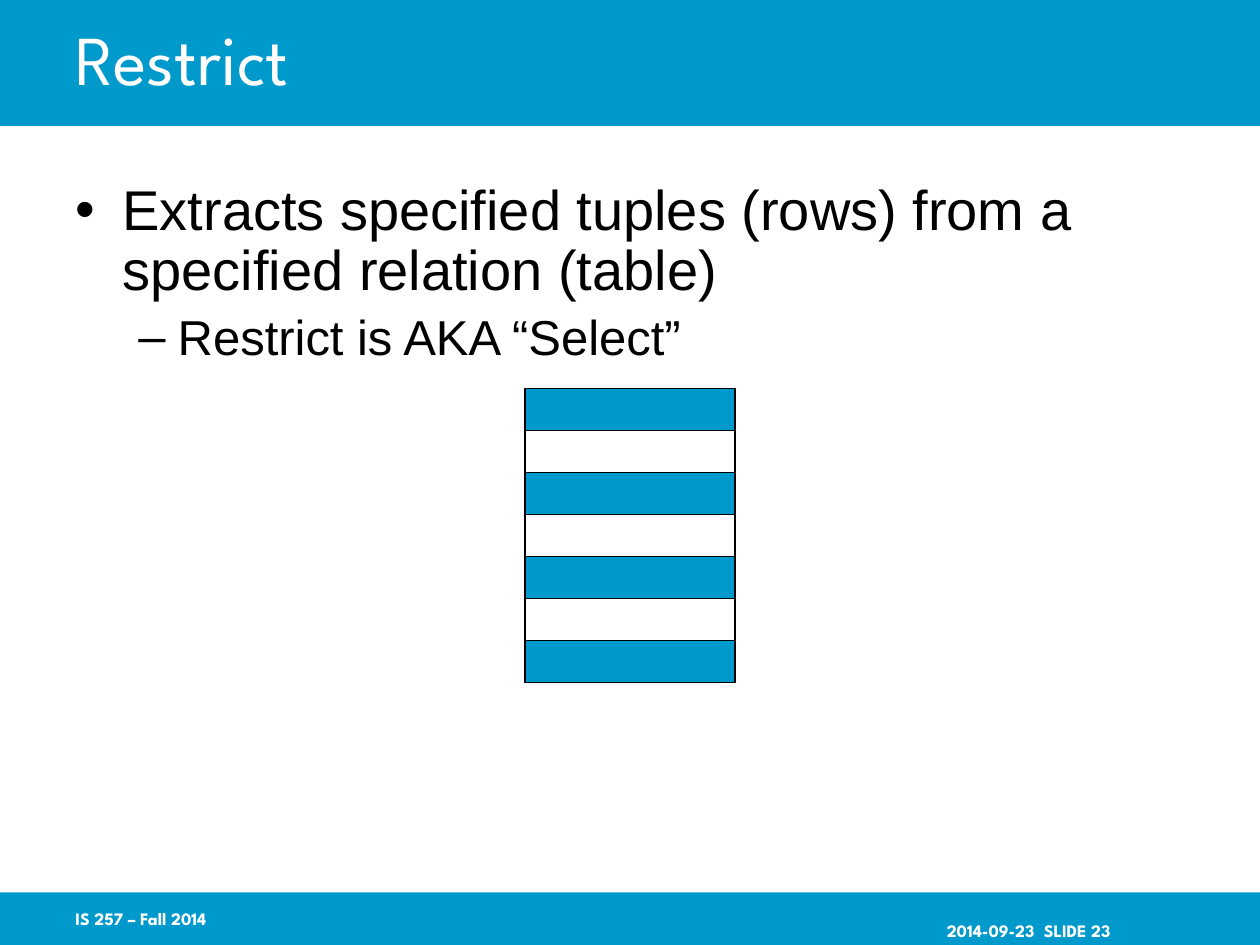
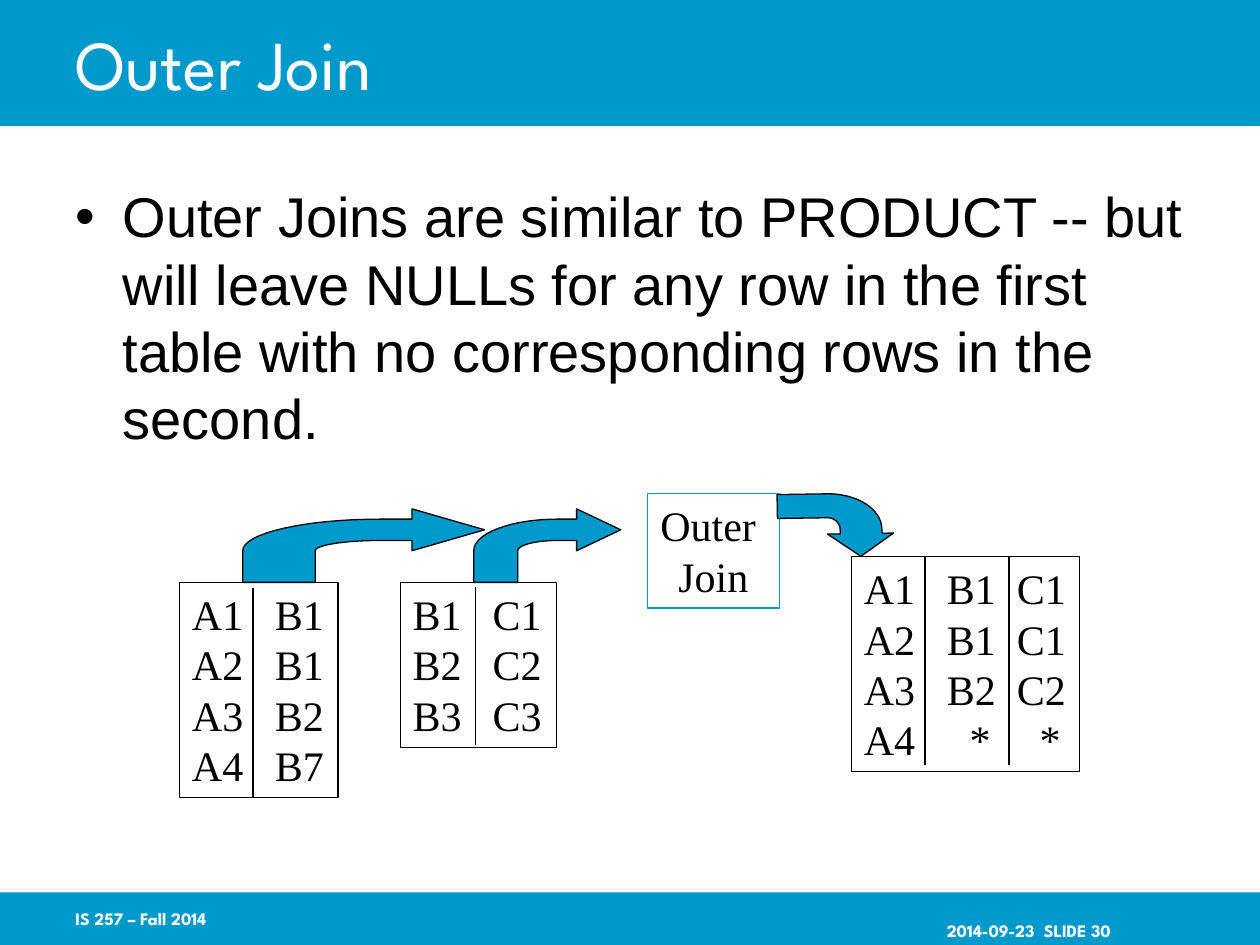
from math import cos, pi, sin

from lxml.etree import SubElement
from pptx import Presentation
from pptx.dml.color import RGBColor
from pptx.enum.shapes import MSO_CONNECTOR, MSO_SHAPE
from pptx.enum.text import MSO_ANCHOR, PP_ALIGN
from pptx.oxml.ns import qn
from pptx.util import Pt

BLUE = RGBColor(0x00, 0x99, 0xCC)
WHITE = RGBColor(0xFF, 0xFF, 0xFF)
BLACK = RGBColor(0x00, 0x00, 0x00)

TITLE_FONT = {"name": "League Spartan", "size": Pt(40), "color": WHITE}
FOOTER_FONT = {"name": "League Spartan", "size": Pt(10), "color": WHITE, "bold": True}
CELL_FONT = {"name": "Times New Roman", "size": Pt(24), "color": BLACK}
# Bullet character, text size, left margin and hanging indent for each level
BULLETS = [("•", 32, 27, 27), ("–", 28, 58.5, 22.5)]

PAGE_WIDTH, PAGE_HEIGHT = 720, 540
TITLE_BOX = (36, 0, 612, 72)
BODY_BOX = (36, 96, 648, 390)
FOOTER_TOP, FOOTER_HEIGHT = 510, 30
INSETS = (7.2, 3.6, 7.2, 3.6)


def points(values):
    return [Pt(value) for value in values]


def paint(shape, fill=None, line=None):
    shape.shadow.inherit = False
    if fill is None:
        shape.fill.background()
    else:
        shape.fill.solid()
        shape.fill.fore_color.rgb = fill
    if line is None:
        shape.line.fill.background()
    else:
        shape.line.color.rgb = line
        shape.line.width = Pt(0.75)


def add_rectangle(page, box, fill=None, line=None):
    shape = page.shapes.add_shape(MSO_SHAPE.RECTANGLE, *points(box))
    paint(shape, fill, line)
    return shape


def prepare_frame(shape, anchor=MSO_ANCHOR.TOP, insets=INSETS):
    frame = shape.text_frame
    frame.word_wrap = True
    frame.vertical_anchor = anchor
    sides = ("left", "top", "right", "bottom")
    for side, inset in zip(sides, insets):
        setattr(frame, f"margin_{side}", Pt(inset))
    return frame


def write_span(para, text, font):
    span = para.add_run()
    span.text = text
    for key, value in font.items():
        if key == "color":
            span.font.color.rgb = value
        else:
            setattr(span.font, key, value)


def next_para(frame, index):
    return frame.add_paragraph() if index else frame.paragraphs[0]


def set_tab_stops(para, stops):
    tab_list = SubElement(para._p.get_or_add_pPr(), qn("a:tabLst"))
    for stop in stops:
        SubElement(tab_list, qn("a:tab"), pos=str(Pt(stop)), algn="l")


def add_label(page, box, text, font, insets=INSETS, stops=(), spacing=1.0):
    """Write one line, centred vertically in its box."""
    label = page.shapes.add_textbox(*points(box))
    para = prepare_frame(label, MSO_ANCHOR.MIDDLE, insets).paragraphs[0]
    if stops:
        set_tab_stops(para, stops)
    para.line_spacing = spacing
    write_span(para, text, font)


def add_body(page, box, items, spacing):
    """Write (level, text) items as a bulleted list."""
    body = page.shapes.add_textbox(*points(box))
    frame = prepare_frame(body, insets=(7.2, 8, 7.2, 0))
    for index, (level, text) in enumerate(items):
        mark, size, margin, hanging = BULLETS[level]
        para = next_para(frame, index)
        properties = para._p.get_or_add_pPr()
        properties.set("marL", str(Pt(margin)))
        properties.set("indent", str(-Pt(hanging)))
        SubElement(properties, qn("a:buFont"), typeface="Arial")
        SubElement(properties, qn("a:buChar"), char=mark)
        para.level = level
        para.line_spacing = spacing
        if index:
            para.space_before = Pt(size * 0.2)
        write_span(para, text, {"name": "Arial", "size": Pt(size), "color": BLACK})


def add_page(deck, title, number, items, spacing):
    page = deck.slides.add_slide(deck.slide_layouts[6])
    add_rectangle(page, (0, 0, PAGE_WIDTH, 72), BLUE)
    add_rectangle(page, (0, FOOTER_TOP, PAGE_WIDTH, FOOTER_HEIGHT), BLUE)
    add_label(page, (534, FOOTER_TOP, 150, FOOTER_HEIGHT),
              f"2014-09-23\tSLIDE {number}", FOOTER_FONT,
              insets=(7.2, 16.5, 0, 3.6), stops=[55.4])
    add_label(page, (36, FOOTER_TOP, 150, FOOTER_HEIGHT), "IS 257 – Fall 2014",
              FOOTER_FONT, insets=(7.2, 3.6, 0, 3.6))
    add_label(page, TITLE_BOX, title, TITLE_FONT, spacing=spacing)
    add_body(page, BODY_BOX, items, spacing)
    return page


def add_striped_relation(page, box, row_count):
    """Draw a relation whose every other row is selected."""
    left, top, width, height = box
    row_height = height / row_count
    add_rectangle(page, box, BLUE, BLACK)
    for row in range(1, row_count, 2):
        row_box = (left, top + row * row_height, width, row_height)
        add_rectangle(page, row_box, WHITE, BLACK)


def add_relation(page, box, rows, stops, dividers, divider_gaps):
    """Draw a framed relation; stops and dividers are offsets from its left."""
    left, top, width, height = box
    frame = prepare_frame(add_rectangle(page, box, line=BLACK),
                          insets=(7.2, 3.6, 0, 3.6))
    for index, row in enumerate(rows):
        para = next_para(frame, index)
        para.alignment = PP_ALIGN.LEFT
        null_shift = 13 if "*" in row else 0
        set_tab_stops(para, [stop + null_shift for stop in stops])
        write_span(para, "\t".join(row), CELL_FONT)
    top_gap, bottom_gap = divider_gaps
    for divider in dividers:
        x = left + divider
        line = page.shapes.add_connector(
            MSO_CONNECTOR.STRAIGHT,
            *points((x, top + top_gap, x, top + height - bottom_gap)))
        line.line.color.rgb = BLACK
        line.line.width = Pt(0.75)
        SubElement(line._element.spPr, qn("a:effectLst"))


def add_operator(page, box, lines):
    frame = prepare_frame(add_rectangle(page, box, line=BLUE))
    for index, text in enumerate(lines):
        para = next_para(frame, index)
        para.alignment = PP_ALIGN.CENTER
        write_span(para, text, CELL_FONT)


def add_bent_arrow(page, box, neck=0.7, stem=0.3, shaft=(0.14, 0.43), rotation=0):
    """Draw an arrow rising, then bending right; proportions are shares of the box."""
    left, top, width, height = box
    bend_x, bend_y, head_bottom, steps = 0.57, 0.57, 0.57, 16
    upper, lower = shaft

    def quarter(radius_x, radius_y):
        angles = [pi / 2 * step / steps for step in range(steps + 1)]
        return [(bend_x - radius_x * sin(angle), bend_y - radius_y * cos(angle))
                for angle in angles]

    outline = [(1, head_bottom / 2), (neck, 0), (neck, upper)]
    outline += quarter(bend_x, bend_y - upper)
    outline += [(0, 1), (stem, 1)]
    outline += reversed(quarter(bend_x - stem, bend_y - lower))
    outline += [(neck, lower), (neck, head_bottom)]
    corners = [points((left + x * width, top + y * height)) for x, y in outline]
    builder = page.shapes.build_freeform(*corners[0])
    builder.add_line_segments(corners[1:], close=True)
    arrow = builder.convert_to_shape()
    paint(arrow, BLUE, BLACK)
    arrow.rotation = rotation


def build_restrict(deck):
    items = [(0, "Extracts specified tuples (rows) from a specified relation (table)"),
             (1, "Restrict is AKA “Select”")]
    page = add_page(deck, "Restrict", 23, items, spacing=0.9)
    add_striped_relation(page, (300, 222, 120, 168), row_count=7)


def build_outer_join(deck):
    items = [(0, "Outer Joins are similar to PRODUCT -- but will leave NULLs for any "
                 "row in the first table with no corresponding rows in the second.")]
    page = add_page(deck, "Outer Join", 30, items, spacing=1.0)
    add_relation(page, (102.6, 332.8, 90.6, 122.8),
                 [("A1", "B1"), ("A2", "B1"), ("A3", "B2"), ("A4", "B7")],
                 stops=[47.4], dividers=[42], divider_gaps=(3.4, 0))
    add_relation(page, (228.7, 332.8, 89.4, 94.2),
                 [("B1", "C1"), ("B2", "C2"), ("B3", "C3")],
                 stops=[45.8], dividers=[43.2], divider_gaps=(2.7, 1.5))
    add_relation(page, (486.6, 318, 130.4, 122.8),
                 [("A1", "B1", "C1"), ("A2", "B1", "C1"),
                  ("A3", "B2", "C2"), ("A4", "*", "*")],
                 stops=[47.4, 87.4], dividers=[42, 90], divider_gaps=(0, 3.4))
    add_bent_arrow(page, (138.7, 290.8, 138.2, 42))
    add_bent_arrow(page, (270.7, 290.8, 84, 42))
    add_operator(page, (369.8, 282, 75.6, 65.5), ["Outer ", "Join"])
    add_bent_arrow(page, (459.4, 267, 36, 66.2), neck=0.64, stem=0.38,
                   shaft=(0.1, 0.46), rotation=89.1)


def main():
    deck = Presentation()
    deck.slide_width, deck.slide_height = points((PAGE_WIDTH, PAGE_HEIGHT))
    build_restrict(deck)
    build_outer_join(deck)
    deck.save("out.pptx")


if __name__ == "__main__":
    main()
